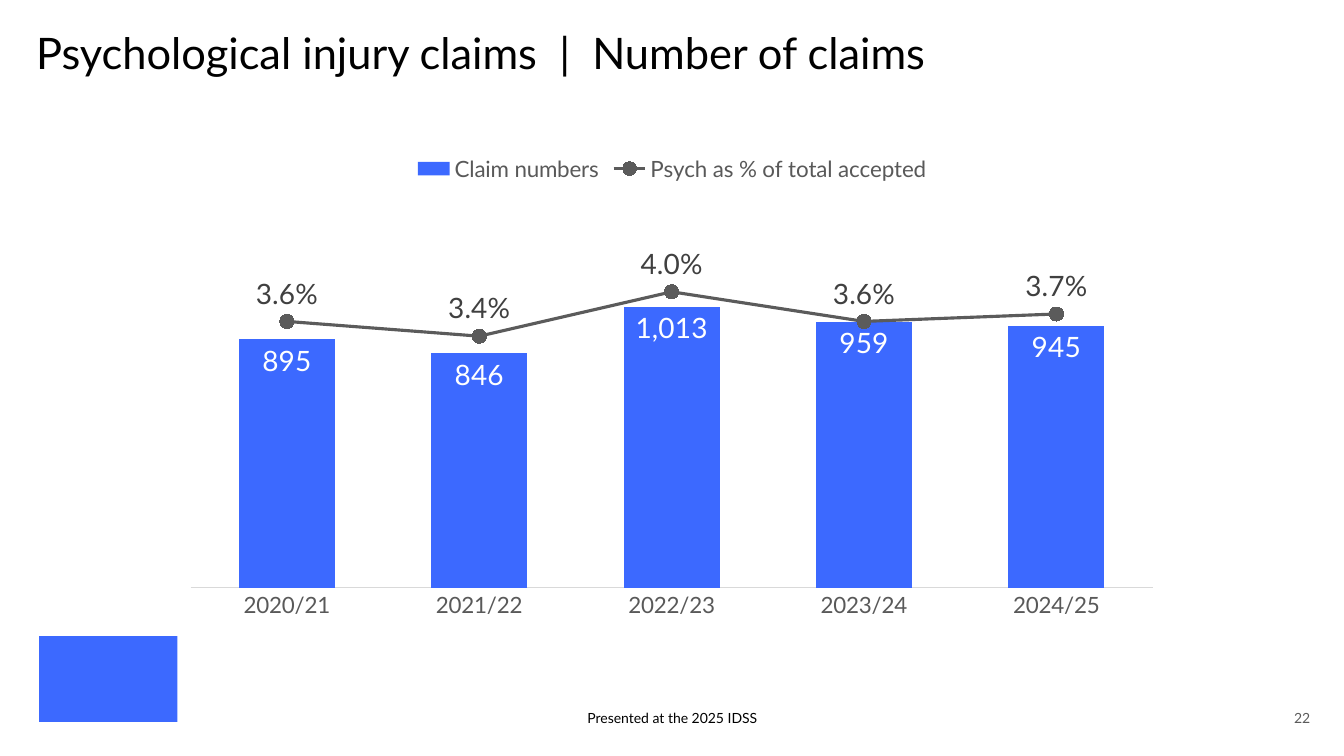
from dataclasses import dataclass

from lxml import etree
from pptx import Presentation
from pptx.chart.chart import Chart
from pptx.chart.data import CategoryChartData
from pptx.dml.color import RGBColor
from pptx.enum.chart import (XL_CHART_TYPE, XL_LABEL_POSITION, XL_LEGEND_POSITION,
                             XL_MARKER_STYLE, XL_TICK_LABEL_POSITION, XL_TICK_MARK)
from pptx.enum.shapes import MSO_SHAPE
from pptx.enum.text import MSO_ANCHOR, PP_ALIGN
from pptx.oxml import parse_xml
from pptx.oxml.ns import qn
from pptx.slide import Slide
from pptx.text.text import Font
from pptx.util import Cm, Pt

COLUMNS = XL_CHART_TYPE.COLUMN_CLUSTERED
INSIDE_END, ABOVE = XL_LABEL_POSITION.INSIDE_END, XL_LABEL_POSITION.ABOVE
LEGEND_TOP = XL_LEGEND_POSITION.TOP
CIRCLE = XL_MARKER_STYLE.CIRCLE
NO_LABELS, NO_TICKS = XL_TICK_LABEL_POSITION.NONE, XL_TICK_MARK.NONE
RECTANGLE = MSO_SHAPE.RECTANGLE
TOP, BOTTOM = MSO_ANCHOR.TOP, MSO_ANCHOR.BOTTOM
LEFT, CENTER, RIGHT = PP_ALIGN.LEFT, PP_ALIGN.CENTER, PP_ALIGN.RIGHT
CHART_NS = "http://schemas.openxmlformats.org/drawingml/2006/chart"


@dataclass(frozen=True)
class Theme:
    font: str = "Lato"
    blue: RGBColor = RGBColor(0x3C, 0x69, 0xFF)
    grey: RGBColor = RGBColor(0x5B, 0x5B, 0x5B)
    axis_text: RGBColor = RGBColor(0x59, 0x59, 0x59)
    axis_line: RGBColor = RGBColor(0xD9, 0xD9, 0xD9)
    dark_label: RGBColor = RGBColor(0x40, 0x40, 0x40)
    black: RGBColor = RGBColor(0, 0, 0)
    white: RGBColor = RGBColor(0xFF, 0xFF, 0xFF)
    title_size: float = 31
    label_size: float = 20
    axis_size: float = 16
    footer_size: float = 10


THEME = Theme()


@dataclass(frozen=True)
class TextItem:
    text: str
    left: float
    top: float
    width: float
    height: float
    size: float
    color: RGBColor
    align: PP_ALIGN = LEFT
    anchor: MSO_ANCHOR = BOTTOM
    line_spacing: float = 1.0


@dataclass(frozen=True)
class Measure:
    name: str
    values: tuple[float, ...]
    number_format: str
    label_position: XL_LABEL_POSITION
    label_color: RGBColor


TEXTS = (
    TextItem("Psychological injury claims  |  Number of claims", 0.91, 0.81, 28, 3.43,
             THEME.title_size, THEME.black, anchor=TOP, line_spacing=0.9),
    TextItem("22", 31.85, 17.8, 1.17, 0.51, THEME.footer_size, THEME.grey, RIGHT),
    TextItem("Presented at the 2025 IDSS", 11.23, 17.8, 11.43, 0.51,
             THEME.footer_size, THEME.black, CENTER),
)
YEARS = ("2020/21", "2021/22", "2022/23", "2023/24", "2024/25")
MEASURES = (
    Measure("Claim numbers", (895, 846, 1013, 959, 945), "#,##0", INSIDE_END, THEME.white),
    Measure("Psych as % of total accepted", (0.036, 0.034, 0.04, 0.036, 0.037), "0.0%",
            ABOVE, THEME.dark_label),
)
CLAIMS_MAX, SHARE_MAX = 1200, 0.045

PLOT_LAYOUT = f"""<c:layout xmlns:c="{CHART_NS}"><c:manualLayout>
<c:layoutTarget val="inner"/><c:xMode val="edge"/><c:yMode val="edge"/>
<c:x val="0.017"/><c:y val="0.225"/><c:w val="0.965"/><c:h val="0.673"/>
</c:manualLayout></c:layout>"""
LINE_PLOT = f"""<c:lineChart xmlns:c="{CHART_NS}"><c:grouping val="standard"/>
<c:varyColors val="0"/><c:marker val="1"/><c:axId val="5001"/><c:axId val="5002"/>
</c:lineChart>"""
SHARE_CATEGORY_AXIS = f"""<c:catAx xmlns:c="{CHART_NS}"><c:axId val="5001"/>
<c:scaling><c:orientation val="minMax"/></c:scaling><c:delete val="1"/>
<c:axPos val="b"/><c:crossAx val="5002"/><c:crosses val="autoZero"/></c:catAx>"""
SHARE_VALUE_AXIS = f"""<c:valAx xmlns:c="{CHART_NS}"><c:axId val="5002"/>
<c:scaling><c:orientation val="minMax"/><c:max val="{SHARE_MAX}"/><c:min val="0"/></c:scaling>
<c:delete val="0"/><c:axPos val="r"/><c:numFmt formatCode="0.0%" sourceLinked="0"/>
<c:majorTickMark val="none"/><c:minorTickMark val="none"/><c:tickLblPos val="none"/>
<c:spPr><a:ln xmlns:a="http://schemas.openxmlformats.org/drawingml/2006/main"><a:noFill/></a:ln>
</c:spPr><c:crossAx val="5001"/><c:crosses val="max"/></c:valAx>"""


def style_font(font: Font, size: float, color: RGBColor) -> None:
    font.name, font.size, font.bold = THEME.font, Pt(size), False
    font.color.rgb = color


def add_text(s: Slide, item: TextItem) -> None:
    box = s.shapes.add_textbox(Cm(item.left), Cm(item.top), Cm(item.width), Cm(item.height))
    tf = box.text_frame
    tf.word_wrap, tf.vertical_anchor = True, item.anchor
    tf.margin_left = tf.margin_right = tf.margin_top = tf.margin_bottom = 0
    p = tf.paragraphs[0]
    p.alignment, p.line_spacing = item.align, item.line_spacing
    r = p.add_run()
    r.text = item.text
    style_font(r.font, item.size, item.color)


def add_emblem(s: Slide) -> None:
    sp = s.shapes.add_shape(RECTANGLE, Cm(0.99), Cm(16.03), Cm(3.48), Cm(2.16))
    sp.shadow.inherit = False
    sp.fill.solid()
    sp.fill.fore_color.rgb = THEME.blue
    sp.line.fill.background()


def move_share_to_line(chart: Chart) -> None:
    """Turn the second column series into a line on its own right-hand axis."""
    plot_area = chart._chartSpace.find(".//" + qn("c:plotArea"))
    for layout in plot_area.findall(qn("c:layout")):
        plot_area.remove(layout)
    plot_area.insert(0, parse_xml(PLOT_LAYOUT))
    bars = plot_area.find(qn("c:barChart"))
    share = bars.findall(qn("c:ser"))[1]
    etree.strip_elements(share, qn("c:invertIfNegative"))
    line = parse_xml(LINE_PLOT)
    line.insert(2, share)
    bars.addnext(line)
    claims_axis = plot_area.find(qn("c:valAx"))
    claims_axis.addnext(parse_xml(SHARE_CATEGORY_AXIS))
    claims_axis.getnext().addnext(parse_xml(SHARE_VALUE_AXIS))


def style_axes(chart: Chart) -> None:
    years, claims = chart.category_axis, chart.value_axis
    years.major_tick_mark = claims.major_tick_mark = NO_TICKS
    years.has_major_gridlines = claims.has_major_gridlines = False
    style_font(years.tick_labels.font, THEME.axis_size, THEME.axis_text)
    years.format.line.color.rgb = THEME.axis_line
    years.format.line.width = Pt(0.75)
    claims.minimum_scale, claims.maximum_scale = 0, CLAIMS_MAX
    claims.tick_label_position = NO_LABELS
    claims.format.line.fill.background()


def add_claims_chart(s: Slide) -> None:
    data = CategoryChartData()
    data.categories = YEARS
    for measure in MEASURES:
        data.add_series(measure.name, measure.values, measure.number_format)
    chart = s.shapes.add_chart(COLUMNS, Cm(4.38), Cm(3.62), Cm(25.12), Cm(12.46), data).chart
    style_font(chart.font, THEME.footer_size, THEME.black)
    chart.has_title = False
    chart.has_legend = True
    chart.legend.position, chart.legend.include_in_layout = LEGEND_TOP, False
    style_font(chart.legend.font, THEME.axis_size, THEME.axis_text)
    style_axes(chart)
    move_share_to_line(chart)

    bar_plot, line_plot = chart.plots
    bar_plot.gap_width, bar_plot.vary_by_categories = 100, False
    bars, line = bar_plot.series[0], line_plot.series[0]
    bars.format.fill.solid()
    bars.format.fill.fore_color.rgb = THEME.blue
    line.smooth = False
    line.format.line.color.rgb = THEME.grey
    line.format.line.width = Pt(2.25)
    line.marker.style, line.marker.size = CIRCLE, 10
    line.marker.format.fill.solid()
    line.marker.format.fill.fore_color.rgb = THEME.grey
    line.marker.format.line.color.rgb = THEME.grey

    for series, measure in zip((bars, line), MEASURES):
        labels = series.data_labels
        labels.show_value, labels.position = True, measure.label_position
        labels.number_format, labels.number_format_is_linked = measure.number_format, False
        style_font(labels.font, THEME.label_size, measure.label_color)


def main() -> None:
    prs = Presentation()
    prs.slide_width, prs.slide_height = Cm(33.87), Cm(19.05)
    s = prs.slides.add_slide(prs.slide_layouts[6])
    add_emblem(s)
    add_claims_chart(s)
    for item in TEXTS:
        add_text(s, item)
    prs.save("out.pptx")


if __name__ == "__main__":
    main()
